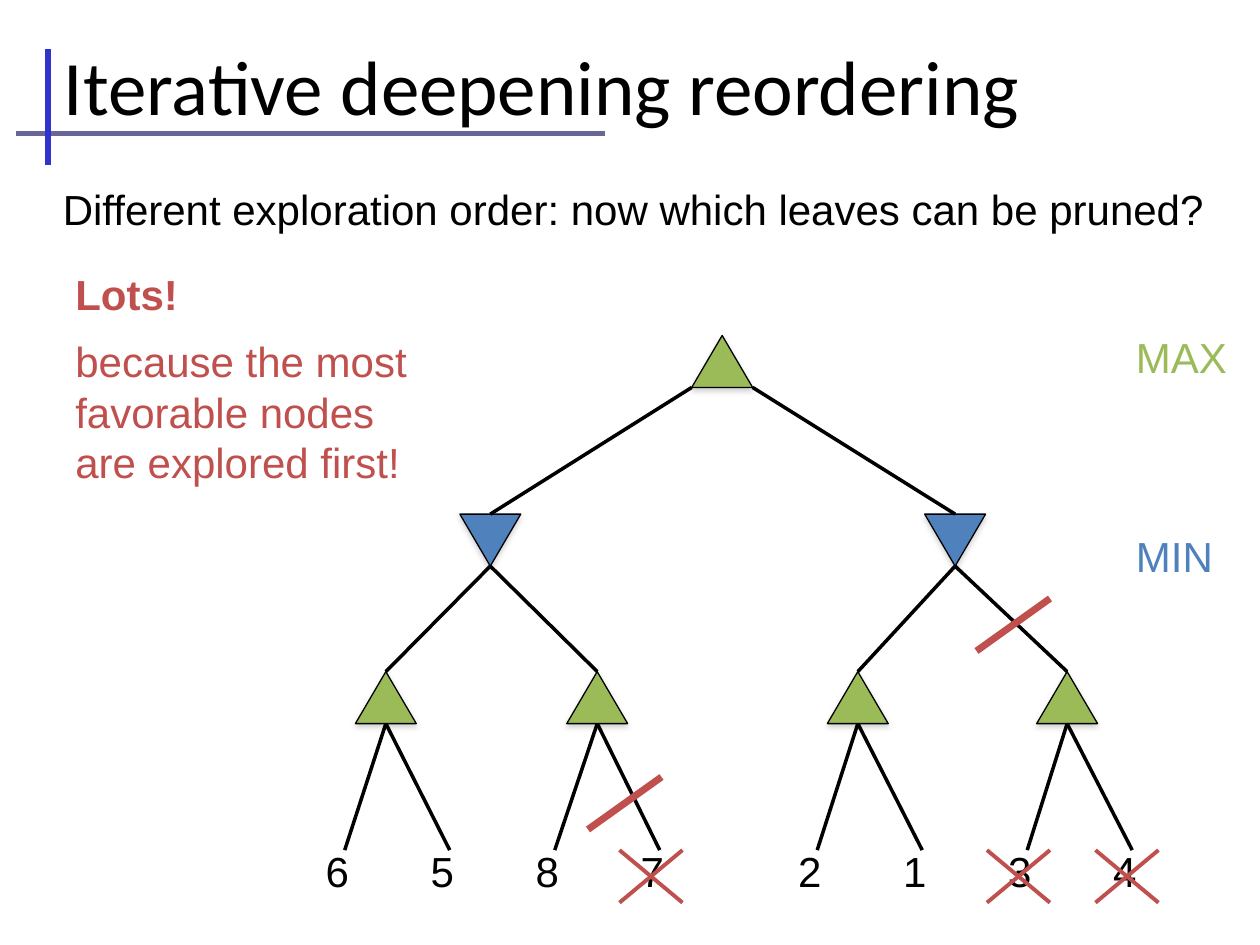
from typing import NamedTuple

from lxml.etree import SubElement
from pptx import Presentation
from pptx.dml.color import RGBColor
from pptx.enum.shapes import MSO_CONNECTOR, MSO_SHAPE
from pptx.enum.text import MSO_ANCHOR
from pptx.oxml import parse_xml
from pptx.oxml.ns import nsdecls, qn
from pptx.util import Pt

BLACK = RGBColor(0x00, 0x00, 0x00)
GREEN = RGBColor(0x9B, 0xBB, 0x59)
BLUE = RGBColor(0x4F, 0x81, 0xBD)
RED = RGBColor(0xC0, 0x50, 0x4D)
SLATE = RGBColor(0x66, 0x66, 0x99)
INDIGO = RGBColor(0x33, 0x33, 0xCC)

NODE_W, NODE_H = 34.8, 29.7
ROOT_TOP, MIN_TOP, MAX_TOP, LEAF_TOP = 191.7, 293.8, 383.8, 485.8
LEAF_PITCH, SUBTREE_GAP, FIRST_LEAF = 60, 30, 197
CROSS_W, CROSS_H = 36, 30
SLASH_W, SLASH_H = 42, 30

SHADOW = (
    f'<a:effectLst {nsdecls("a")}>'
    '<a:outerShdw blurRad="39400" dist="22900" dir="5400000" rotWithShape="0">'
    '<a:srgbClr val="808080"><a:alpha val="35000"/></a:srgbClr>'
    '</a:outerShdw></a:effectLst>'
)


class Node(NamedTuple):
    x: float
    top: float
    is_max: bool

    @property
    def bottom(self) -> float:
        return self.top + NODE_H


class Label(NamedTuple):
    text: str
    left: float
    top: float
    width: float
    height: float = 36.7
    color: RGBColor = BLACK
    size: float = 24
    font: str = "Arial"
    wrap: bool = False


ROOT = Node(412.7, ROOT_TOP, True)
MIN_NODES = [Node(x, MIN_TOP, False) for x in (280.2, 545.8)]
MAX_NODES = [Node(x, MAX_TOP, True) for x in (220.5, 341.3, 490.2, 609.8)]
LEAVES = "65872134"
CROSS_CENTERS = (372, 582, 644)
SLASHES = ((336, 444), (558, 342))

TITLE = Label("Iterative deepening reordering", 29.5, 8.2, 642, 80.6,
              size=44, font="Calibri")
ANSWER = Label("Lots!\nbecause the most favorable nodes are explored first!",
               36, 149.8, 216, 133.2, RED, wrap=True)
LABELS = [
    Label("Different exploration order: now which leaves can be pruned?",
          28.8, 101.5, 678.2),
    Label("MAX", 642, 185.8, 67, color=GREEN),
    Label("MIN", 642, 299.5, 59, color=BLUE),
]


def add_line(s, x1: float, y1: float, x2: float, y2: float,
             color: RGBColor = BLACK, width: float = 2) -> None:
    line = s.shapes.add_connector(
        MSO_CONNECTOR.STRAIGHT, Pt(x1), Pt(y1), Pt(x2), Pt(y2))
    line.line.color.rgb = color
    line.line.width = Pt(width)
    SubElement(line._element.spPr, qn("a:effectLst"))


def add_node(s, node: Node) -> None:
    shape = MSO_SHAPE.ISOSCELES_TRIANGLE if node.is_max else MSO_SHAPE.FLOWCHART_MERGE
    sp = s.shapes.add_shape(
        shape, Pt(node.x - NODE_W / 2), Pt(node.top), Pt(NODE_W), Pt(NODE_H))
    sp.fill.solid()
    sp.fill.fore_color.rgb = GREEN if node.is_max else BLUE
    sp.line.color.rgb = BLACK
    sp.line.width = Pt(0.75)
    sp._element.spPr.append(parse_xml(SHADOW))


def add_label(s, label: Label):
    tf = s.shapes.add_textbox(Pt(label.left), Pt(label.top),
                              Pt(label.width), Pt(label.height)).text_frame
    tf.word_wrap = label.wrap
    tf.text = label.text
    for p in tf.paragraphs:
        p.line_spacing = Pt(label.size * 1.2)
        for r in p.runs:
            r.font.name = label.font
            r.font.size = Pt(label.size)
            r.font.color.rgb = label.color
    return tf


def add_cross(s, x: float, top: float) -> None:
    left, right = x - CROSS_W / 2, x + CROSS_W / 2
    add_line(s, left, top, right, top + CROSS_H, RED, 2.25)
    add_line(s, right, top, left, top + CROSS_H, RED, 2.25)


def add_tree(s) -> None:
    for node in (ROOT, *MIN_NODES, *MAX_NODES):
        add_node(s, node)
    for side, child in zip((-1, 1), MIN_NODES):
        add_line(s, ROOT.x + side * NODE_W / 2, ROOT.bottom, child.x, child.top)
    for i, child in enumerate(MAX_NODES):
        parent = MIN_NODES[i // 2]
        add_line(s, parent.x, parent.bottom, child.x, child.top)
    for i, value in enumerate(LEAVES):
        parent = MAX_NODES[i // 2]
        x = FIRST_LEAF + i * LEAF_PITCH + i // 4 * SUBTREE_GAP
        add_line(s, parent.x, parent.bottom, x, LEAF_TOP)
        add_label(s, Label(value, x - 18, 479.5, 28))


def main() -> None:
    prs = Presentation()
    prs.slide_width, prs.slide_height = Pt(720), Pt(540)
    s = prs.slides.add_slide(prs.slide_layouts[6])

    add_line(s, 9.4, 76.3, 345.6, 76.3, SLATE, 3)
    add_line(s, 27.4, 94.3, 27.4, 28.1, INDIGO, 3)
    add_label(s, TITLE).vertical_anchor = MSO_ANCHOR.MIDDLE

    add_tree(s)
    for label in LABELS:
        add_label(s, label)

    lots, reason = add_label(s, ANSWER).paragraphs
    lots.runs[0].font.bold = True
    reason.space_before = Pt(9.6)

    for left, top in SLASHES:
        add_line(s, left + SLASH_W, top, left, top + SLASH_H, RED, 4)
    for x in CROSS_CENTERS:
        add_cross(s, x, LEAF_TOP)

    prs.save("out.pptx")


if __name__ == "__main__":
    main()
